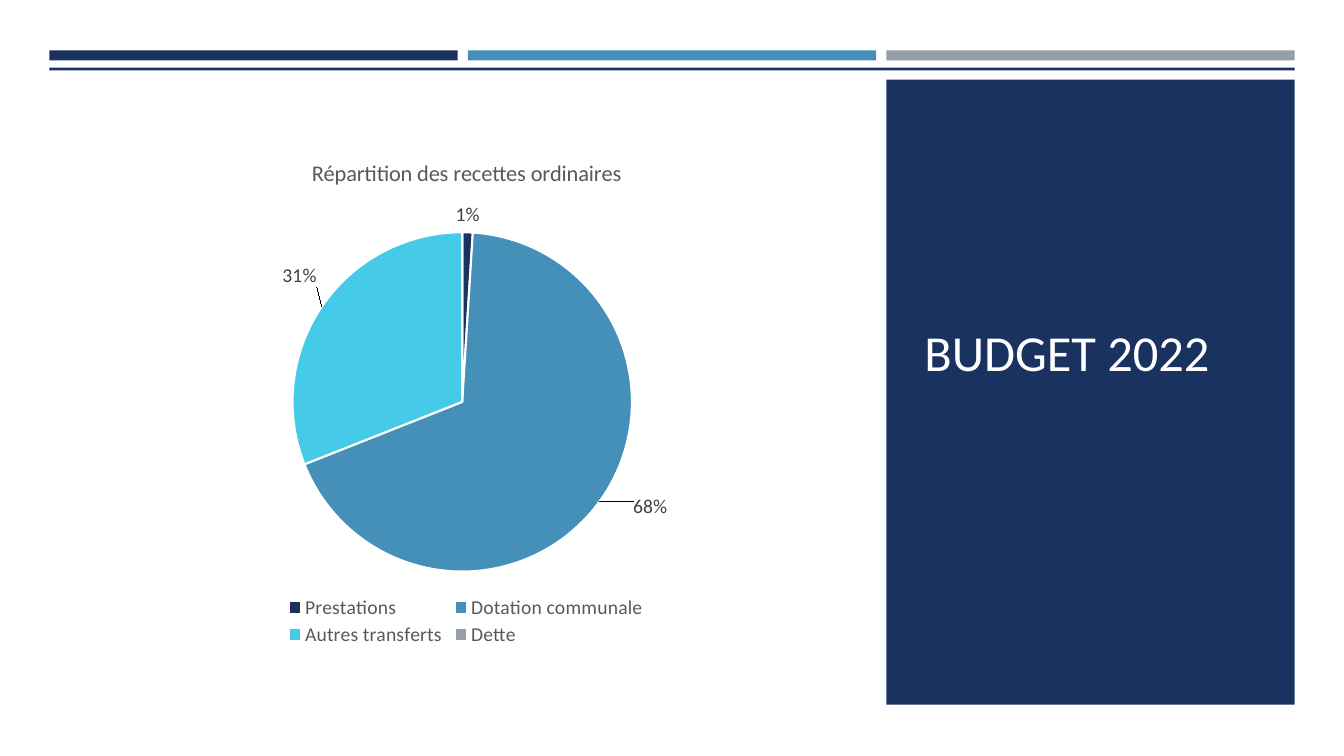
from dataclasses import dataclass

import pptx
import pptx.chart.data
import pptx.dml.color
import pptx.enum.chart
import pptx.enum.shapes
import pptx.enum.text
import pptx.oxml
import pptx.oxml.ns
import pptx.util

Inches = pptx.util.Inches
Pt = pptx.util.Pt
NAVY, BLUE, CYAN, GREY, WHITE = "1A3260", "4590B8", "45CBE8", "969FA7", "FFFFFF"
FACE = "Calibri"


@dataclass
class Block:
    left: float
    top: float
    width: float
    height: float
    fill: str


@dataclass
class Slice:
    name: str
    value: int
    fill: str
    shift: tuple[float, float] | None = None  # label offset, share of chart size


COLS = [0.49 + 4.15 * i for i in range(3)]
BLOCKS = [Block(x, 0.5, 4.05, 0.1, fill) for x, fill in zip(COLS, (NAVY, BLUE, GREY))]
BLOCKS += [
    Block(COLS[0], 0.67, 12.35, 0.03, NAVY),
    Block(COLS[2], 0.79, 4.05, 6.2, NAVY),
]
SLICES = [
    Slice("Prestations", 1, NAVY),
    Slice("Dotation communale", 68, BLUE, (0.04, -0.02)),
    Slice("Autres transferts", 31, CYAN, (0, -0.03)),
    Slice("Dette", 0, GREY),
]


def rgb(code: str) -> pptx.dml.color.RGBColor:
    return pptx.dml.color.RGBColor.from_string(code)


def style(font, size: float, color: str) -> None:
    font.name, font.size, font.bold = FACE, Pt(size), False
    font.color.rgb = rgb(color)


def write(frame, text: str, *, size: float, color: str) -> None:
    frame.text = text
    style(frame.paragraphs[0].runs[0].font, size, color)


def draw(slide, block: Block) -> None:
    rect = slide.shapes.add_shape(
        pptx.enum.shapes.MSO_SHAPE.RECTANGLE,
        Inches(block.left), Inches(block.top), Inches(block.width), Inches(block.height),
    )
    rect.shadow.inherit = False
    rect.fill.solid()
    rect.fill.fore_color.rgb = rgb(block.fill)
    rect.line.fill.background()


def place(part, after: str | None, **spots: float) -> None:
    """Give a chart part a manual layout, put after the named child or first."""
    for old in part.findall(pptx.oxml.ns.qn("c:layout")):
        part.remove(old)
    modes = "".join(f'<c:{k}Mode val="edge"/>' for k in "xy") if "w" in spots or after == "c:tx" else ""
    target = '<c:layoutTarget val="inner"/>' if after is None else ""
    body = "".join(f'<c:{k} val="{v}"/>' for k, v in spots.items())
    layout = pptx.oxml.parse_xml(
        f'<c:layout {pptx.oxml.ns.nsdecls("c")}><c:manualLayout>'
        f"{target}{modes}{body}</c:manualLayout></c:layout>"
    )
    if after is None:
        part.insert(0, layout)
    else:
        part.find(pptx.oxml.ns.qn(after)).addnext(layout)


def add_pie(slide) -> None:
    data = pptx.chart.data.CategoryChartData()
    data.categories = [s.name for s in SLICES]
    data.add_series("Series 1", [s.value for s in SLICES])
    chart = slide.shapes.add_chart(
        pptx.enum.chart.XL_CHART_TYPE.PIE,
        Inches(1.02), Inches(1.32), Inches(7.13), Inches(5.18), data,
    ).chart
    style(chart.font, 10, "000000")
    chart.has_title = True
    write(chart.chart_title.text_frame, "Répartition des recettes ordinaires", size=16, color="595959")
    place(chart.chart_title._element, "c:tx", x=0.285, y=0.04)

    chart.has_legend = True
    legend = chart.legend
    legend.position = pptx.enum.chart.XL_LEGEND_POSITION.BOTTOM
    legend.include_in_layout = False
    style(legend.font, 14, "595959")
    place(legend._element, "c:legendPos", x=0.25, y=0.88, w=0.51, h=0.11)

    plot = chart.plots[0]
    plot.vary_by_categories = True
    place(chart._chartSpace.chart.plotArea, None, x=0.26, y=0.19, w=0.48, h=0.65)

    series = plot.series[0]
    labels = series.data_labels
    labels.show_percentage, labels.show_value = True, False
    labels.position = pptx.enum.chart.XL_LABEL_POSITION.OUTSIDE_END
    style(labels.font, 14, "404040")
    labels._element.find(pptx.oxml.ns.qn("c:showLeaderLines")).set("val", "1")

    for i, part in enumerate(SLICES):
        point = series.points[i]
        point.format.fill.solid()
        point.format.fill.fore_color.rgb = rgb(part.fill)
        point.format.line.color.rgb = rgb(WHITE)
        point.format.line.width = Pt(1.5)
        if part.shift:
            label = point.data_label
            label.position = pptx.enum.chart.XL_LABEL_POSITION.OUTSIDE_END
            style(label.font, 14, "404040")
            item = labels._element.find(f'{pptx.oxml.ns.qn("c:dLbl")}[last()]')
            for tag, flag in (("c:showVal", "0"), ("c:showPercent", "1")):
                item.find(pptx.oxml.ns.qn(tag)).set("val", flag)
            place(item, "c:idx", x=part.shift[0], y=part.shift[1])


def main() -> None:
    deck = pptx.Presentation()
    deck.slide_width, deck.slide_height = Inches(13.33), Inches(7.5)
    slide = deck.slides.add_slide(deck.slide_layouts[6])
    for block in BLOCKS:
        draw(slide, block)
    title = slide.shapes.add_textbox(Inches(9.07), Inches(1.55), Inches(3.37), Inches(2.28))
    title.text_frame.word_wrap = True
    title.text_frame.vertical_anchor = pptx.enum.text.MSO_ANCHOR.BOTTOM
    write(title.text_frame, "BUDGET 2022", size=36, color=WHITE)
    add_pie(slide)
    deck.save("out.pptx")


if __name__ == "__main__":
    main()
